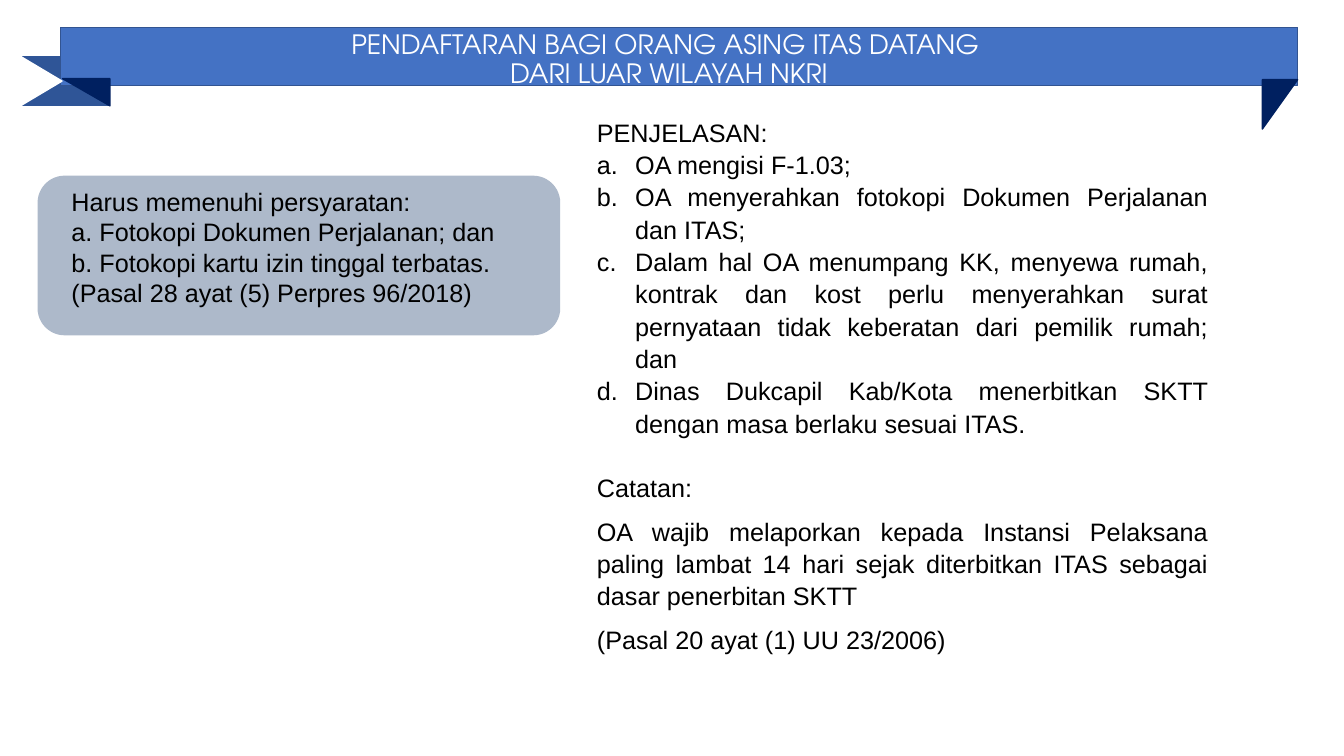
from dataclasses import dataclass

from lxml import etree
from pptx import Presentation
from pptx import util as u
from pptx.dml.color import RGBColor
from pptx.enum import shapes, text
from pptx.oxml import ns
from pptx.shapes.autoshape import Shape
from pptx.slide import Slide
from pptx.text.text import TextFrame

COLORS = {
    "banner": "4472C4", "banner_line": "325491", "tail": "2F5597",
    "fold": "002060", "card": "ADB9CA", "white": "FFFFFF", "black": "000000",
}
KIND = shapes.MSO_SHAPE
ALIGN = text.PP_ALIGN
Box = tuple[float, float, float, float]


@dataclass(frozen=True)
class Block:
    kind: KIND
    box: Box
    fill: str
    line: str
    rotation: float = 0


@dataclass(frozen=True)
class Line:
    words: str
    align: ALIGN = ALIGN.LEFT
    spacing: float = 1.0
    before: float = 0
    after: float = 0
    hanging: float = 0
    numbered: bool = False


@dataclass(frozen=True)
class Style:
    font: str
    size: float
    color: str


HEADING = Style("TeX Gyre Adventor", 19, "white")
BODY = Style("Arial", 18, "black")

RIBBON = [
    Block(KIND.RECTANGLE, (0.23, 0.56, 0.85, 0.49), "tail", "tail"),
    Block(KIND.RECTANGLE, (0.6, 0.27, 12.27, 0.58), "banner", "banner_line"),
    Block(KIND.RIGHT_TRIANGLE, (12.45, 0.86, 0.49, 0.35), "fold", "fold", 90),
    Block(KIND.RIGHT_TRIANGLE, (0.62, 0.78, 0.47, 0.27), "fold", "fold", 180),
    Block(KIND.ISOSCELES_TRIANGLE, (0.1, 0.57, 0.56, 0.47), "white", "white", 90),
]
CARD = Block(KIND.ROUNDED_RECTANGLE, (0.38, 1.75, 5.17, 1.57), "card", "card")

TITLE_LINES = [
    Line(words, ALIGN.CENTER, 0.9)
    for words in ("PENDAFTARAN BAGI ORANG ASING ITAS DATANG ", "DARI LUAR WILAYAH NKRI")
]
STEPS = [
    "OA mengisi F-1.03;",
    "OA menyerahkan fotokopi Dokumen Perjalanan dan ITAS;",
    "Dalam hal OA menumpang KK, menyewa rumah, kontrak dan kost perlu menyerahkan "
    "surat pernyataan tidak keberatan dari pemilik rumah; dan",
    "Dinas Dukcapil Kab/Kota menerbitkan SKTT dengan masa berlaku sesuai ITAS.",
]
NOTES = [
    "OA wajib melaporkan kepada Instansi Pelaksana paling lambat 14 hari sejak "
    "diterbitkan ITAS sebagai dasar penerbitan SKTT",
    "(Pasal 20 ayat (1) UU 23/2006)",
]
EXPLANATION = [
    Line("PENJELASAN:"),
    *(Line(step, ALIGN.JUSTIFY, 1.07, hanging=0.38, numbered=True) for step in STEPS),
    Line("Catatan:", ALIGN.JUSTIFY, 1.07, before=23, after=8),
    *(Line(note, ALIGN.JUSTIFY, 1.07, after=8) for note in NOTES),
]
REQUIREMENTS = [
    Line("Harus memenuhi persyaratan:"),
    Line("a. Fotokopi Dokumen Perjalanan; dan", hanging=0.25),
    Line("b. Fotokopi kartu izin tinggal terbatas.", hanging=0.25),
    Line("(Pasal 28 ayat (5) Perpres 96/2018)", hanging=0.25),
]


def rgb(name: str) -> RGBColor:
    return RGBColor.from_string(COLORS[name])


def add_block(slide: Slide, block: Block) -> None:
    shape = slide.shapes.add_shape(block.kind, *map(u.Inches, block.box))
    shape.shadow.inherit = False
    shape.rotation = block.rotation
    shape.fill.solid()
    shape.fill.fore_color.rgb = rgb(block.fill)
    shape.line.color.rgb = rgb(block.line)
    shape.line.width = u.Pt(1)


def place_in_front(shape: Shape, box: Box) -> None:
    shape.left, shape.top, shape.width, shape.height = map(u.Inches, box)
    shape.element.getparent().append(shape.element)


def write_lines(frame: TextFrame, lines: list[Line], style: Style,
                anchor: text.MSO_ANCHOR = text.MSO_ANCHOR.TOP) -> None:
    frame.word_wrap = True
    frame.auto_size = text.MSO_AUTO_SIZE.NONE
    frame.vertical_anchor = anchor
    for index, line in enumerate(lines):
        paragraph = frame.paragraphs[0] if index == 0 else frame.add_paragraph()
        paragraph.text = line.words
        properties = paragraph._p.get_or_add_pPr()
        properties.set("marL", str(u.Inches(line.hanging)))
        properties.set("indent", str(-u.Inches(line.hanging)))
        if line.numbered:
            bullet = etree.SubElement(properties, ns.qn("a:buAutoNum"))
            bullet.set("type", "alphaLcPeriod")
        else:
            etree.SubElement(properties, ns.qn("a:buNone"))
        paragraph.alignment = line.align
        paragraph.line_spacing = line.spacing
        paragraph.space_before = u.Pt(line.before)
        paragraph.space_after = u.Pt(line.after)
        paragraph.font.name = style.font
        paragraph.font.size = u.Pt(style.size)
        paragraph.font.color.rgb = rgb(style.color)


def main() -> None:
    presentation = Presentation()
    presentation.slide_width = u.Inches(13.33)
    presentation.slide_height = u.Inches(7.5)
    slide = presentation.slides.add_slide(presentation.slide_layouts[1])
    title, explanation = slide.placeholders

    for block in [*RIBBON, CARD]:
        add_block(slide, block)

    place_in_front(title, (1.02, 0.27, 11.23, 0.66))
    write_lines(title.text_frame, TITLE_LINES, HEADING, text.MSO_ANCHOR.MIDDLE)

    place_in_front(explanation, (5.82, 1.11, 6.26, 5.9))
    write_lines(explanation.text_frame, EXPLANATION, BODY)

    requirements = slide.shapes.add_textbox(*map(u.Inches, (0.61, 1.8, 4.82, 1.31)))
    write_lines(requirements.text_frame, REQUIREMENTS, BODY)

    presentation.save("out.pptx")


if __name__ == "__main__":
    main()
